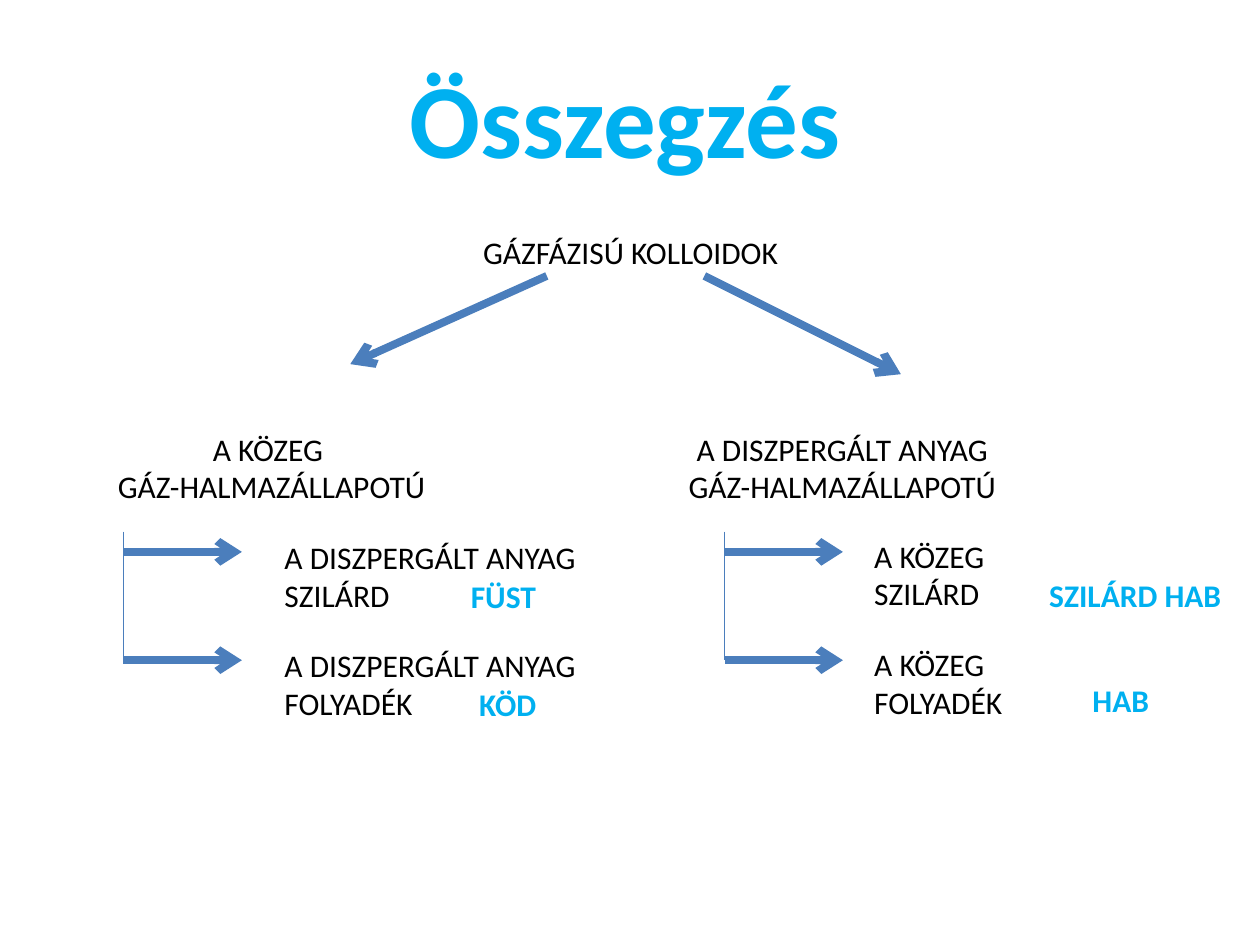
"""Build the summary slide on gas-phase colloids as a two-branch tree."""
from dataclasses import dataclass

from lxml.etree import SubElement
from pptx import Presentation
from pptx.dml.color import RGBColor
from pptx.enum.shapes import MSO_CONNECTOR as Connector
from pptx.enum.text import MSO_ANCHOR as Anchor, PP_ALIGN as Align
from pptx.oxml.ns import qn
from pptx.slide import Slide
from pptx.util import Emu, Inches, Pt

COLUMNS, ROWS = 100, 75
WIDTH, HEIGHT = Inches(10), Inches(7.5)


@dataclass(frozen=True)
class Theme:
    """Colours, font and sizes used on the slide."""
    font: str = "Calibri"
    text: RGBColor = RGBColor(0, 0, 0)
    accent: RGBColor = RGBColor(0x00, 0xB0, 0xF0)
    line: RGBColor = RGBColor(0x4B, 0x7E, 0xBC)
    title_size: float = 60
    body_size: float = 18
    arrow_width: float = 4.5
    trunk_width: float = 0.75


@dataclass(frozen=True)
class Label:
    """A text box placed in grid columns and rows."""
    text: str
    left: float
    top: float
    width: float
    height: float = 7.1
    centred: bool = True
    accent: bool = False
    size: float = 18


@dataclass(frozen=True)
class Line:
    """A line between two grid points."""
    start: tuple[float, float]
    end: tuple[float, float]
    arrow: bool = True


THEME = Theme()
TRUNK_TOP, BRANCH_ROWS = 42.2, (43.8, 52.4)
TRUNK_COLUMNS, BRANCH_LENGTH = (9.8, 57.5), 9.4

LABELS = [
    Label("Összegzés", 4.6, 3, 90, 12.5, accent=True, size=THEME.title_size),
    Label("GÁZFÁZISÚ KOLLOIDOK", 27, 18, 46.1, 4),
    Label("A KÖZEG \nGÁZ-HALMAZÁLLAPOTÚ", 6.7, 33.6, 29.7),
    Label("A DISZPERGÁLT ANYAG GÁZ-HALMAZÁLLAPOTÚ", 52, 33.6, 29.7),
    Label("A DISZPERGÁLT ANYAG SZILÁRD", 21.6, 42.2, 26.6, centred=False),
    Label("A DISZPERGÁLT ANYAG FOLYADÉK", 21.6, 50.8, 26.6, centred=False),
    Label("A KÖZEG\nSZILÁRD", 68.4, 42.1, 13.3, centred=False),
    Label("A KÖZEG\nFOLYADÉK", 68.4, 50.7, 13.3, centred=False),
    Label("FÜST", 30.2, 45.3, 19.5, 4, accent=True),
    Label("KÖD", 32.5, 53.9, 15.6, 4, accent=True),
    Label("SZILÁRD HAB", 80.2, 45.2, 19.8, 4, accent=True),
    Label("HAB", 80.2, 53.6, 17.5, 4, accent=True),
]
ROOT_ARROWS = [Line((43.4, 21.9), (27.8, 28.9)), Line((55.9, 21.9), (71.5, 29.7))]


def across(columns: float) -> Emu:
    """Turn grid columns into a length."""
    return Emu(round(WIDTH * columns / COLUMNS))


def down(rows: float) -> Emu:
    """Turn grid rows into a length."""
    return Emu(round(HEIGHT * rows / ROWS))


def add_label(slide: Slide, label: Label) -> None:
    """Write one label on the slide."""
    shape = slide.shapes.add_textbox(across(label.left), down(label.top),
                                     across(label.width), down(label.height))
    frame = shape.text_frame
    frame.word_wrap = True
    frame.vertical_anchor = Anchor.MIDDLE if label.size == THEME.title_size else Anchor.TOP
    frame.text = label.text
    font_values = {"name": THEME.font, "size": Pt(label.size), "bold": label.accent}
    for paragraph in frame.paragraphs:
        paragraph.alignment = Align.CENTER if label.centred else Align.LEFT
        for run in paragraph.runs:
            for name, value in font_values.items():
                setattr(run.font, name, value)
            run.font.color.rgb = THEME.accent if label.accent else THEME.text


def add_line(slide: Slide, line: Line) -> None:
    """Draw one line, with an open head at its end when it is an arrow."""
    (left, top), (right, bottom) = line.start, line.end
    connector = slide.shapes.add_connector(Connector.STRAIGHT, across(left), down(top),
                                           across(right), down(bottom))
    connector.line.color.rgb = THEME.line
    connector.line.width = Pt(THEME.arrow_width if line.arrow else THEME.trunk_width)
    if line.arrow:
        SubElement(connector.line._get_or_add_ln(), qn("a:tailEnd"), type="arrow")
    SubElement(connector._element.spPr, qn("a:effectLst"))


def branch_lines(column: float) -> list[Line]:
    """Give the trunk and the side arrows that start at a column."""
    trunk = Line((column, TRUNK_TOP), (column, BRANCH_ROWS[-1]), arrow=False)
    return [trunk] + [Line((column, row), (column + BRANCH_LENGTH, row)) for row in BRANCH_ROWS]


def main() -> None:
    """Create and save the presentation."""
    presentation = Presentation()
    presentation.slide_width, presentation.slide_height = WIDTH, HEIGHT
    slide = presentation.slides.add_slide(presentation.slide_layouts[6])
    for label in LABELS:
        add_label(slide, label)
    for line in ROOT_ARROWS + [line for column in TRUNK_COLUMNS for line in branch_lines(column)]:
        add_line(slide, line)
    presentation.save("out.pptx")


if __name__ == "__main__":
    main()
